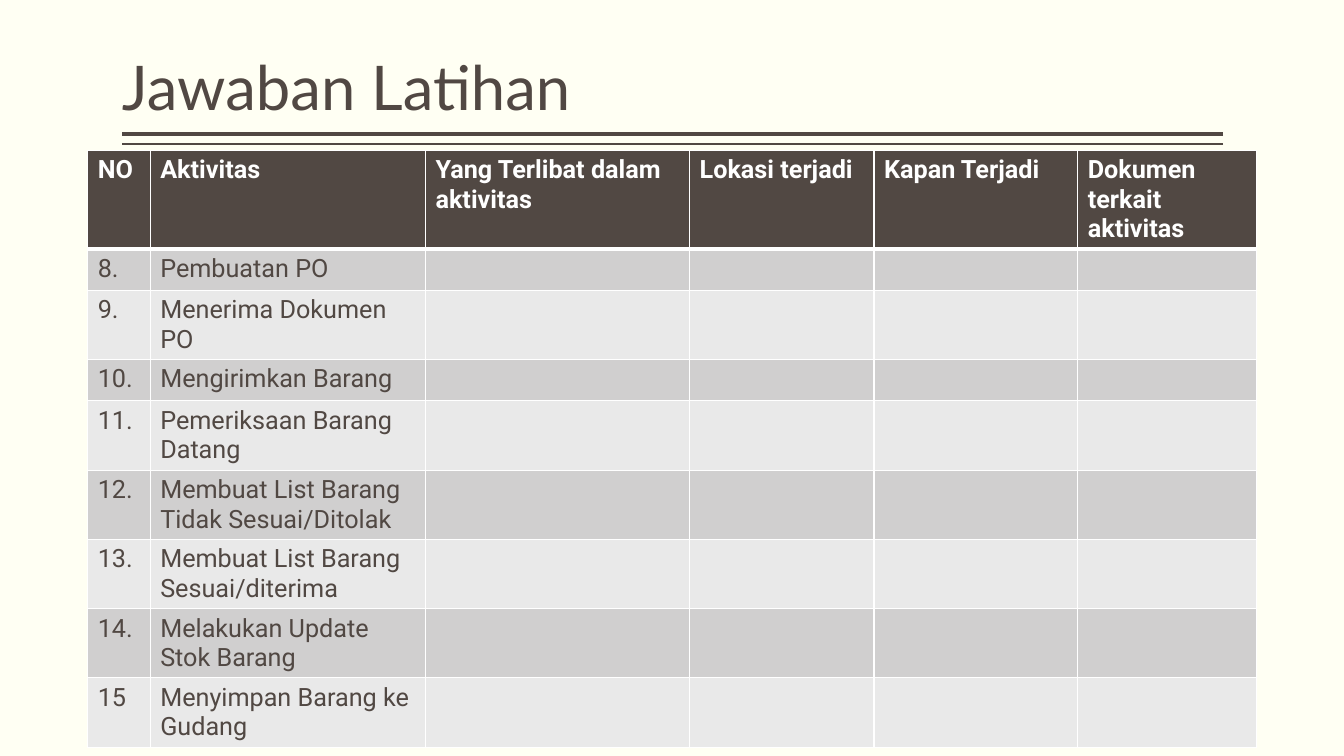
from lxml.etree import SubElement
from pptx import Presentation
from pptx.dml.color import RGBColor
from pptx.enum.shapes import MSO_CONNECTOR
from pptx.enum.text import MSO_ANCHOR, MSO_AUTO_SIZE, PP_ALIGN
from pptx.oxml.ns import qn
from pptx.util import Inches, Pt

# Content
TITLE = "Jawaban Latihan"
HEADERS = ["NO", "Aktivitas", "Yang Terlibat dalam aktivitas",
           "Lokasi terjadi", "Kapan Terjadi", "Dokumen terkait aktivitas"]
ACTIVITIES = [
    ("8.", "Pembuatan PO"),
    ("9.", "Menerima Dokumen PO"),
    ("10.", "Mengirimkan Barang"),
    ("11.", "Pemeriksaan Barang Datang"),
    ("12.", "Membuat List Barang Tidak Sesuai/Ditolak"),
    ("13.", "Membuat List Barang\vSesuai/diterima"),
    ("14.", "Melakukan Update\vStok Barang"),
    ("15", "Menyimpan Barang ke\vGudang"),
]

# Layout and colours
COL_WIDTHS = [0.62, 2.73, 2.62, 1.83, 2.02, 1.77]
ROW_HEIGHT = 0.41
TABLE_LEFT, TABLE_TOP = 0.87, 1.49
LEFT, WIDTH = 1.21, 10.92
RULES = [(1.33, 3), (1.43, 1)]  # height on slide, line weight
BROWN, WHITE, CREAM = "514843", "FFFFFF", "FFFFF3"
BANDS = ["D0CFCF", "E9E9E9"]


def rgb(value):
    return RGBColor.from_string(value)


def style(p, font, size, color, bold=False):
    for r in p.runs:
        r.font.name, r.font.size, r.font.bold = font, Pt(size), bold
        r.font.color.rgb = rgb(color)


def set_borders(cell, bottom):
    """Draw white borders; they must precede the fill in the cell."""
    tc_pr = cell._tc.get_or_add_tcPr()
    for side, weight in (("L", 1), ("R", 1), ("T", 1), ("B", bottom)):
        ln = SubElement(tc_pr, qn(f"a:ln{side}"), w=str(Pt(weight)))
        fill = SubElement(ln, qn("a:solidFill"))
        SubElement(fill, qn("a:srgbClr"), val=WHITE)


prs = Presentation()
prs.slide_width, prs.slide_height = Inches(13.33), Inches(7.5)
s = prs.slides.add_slide(prs.slide_layouts[5])
s.background.fill.solid()
s.background.fill.fore_color.rgb = rgb(CREAM)

# Title
title = s.shapes.title
title.left, title.top = Inches(LEFT), Inches(0.08)
title.width, title.height = Inches(WIDTH), Inches(1.2)
tf = title.text_frame
tf.text = TITLE
tf.auto_size = MSO_AUTO_SIZE.NONE
tf.word_wrap = True
tf.vertical_anchor = MSO_ANCHOR.BOTTOM
tf.margin_left = tf.margin_right = 0
p = tf.paragraphs[0]
p.alignment, p.line_spacing = PP_ALIGN.LEFT, 0.9
style(p, "Lato", 44, BROWN)

# Double rule under the title
for y, weight in RULES:
    rule = s.shapes.add_connector(MSO_CONNECTOR.STRAIGHT, Inches(LEFT + WIDTH),
                                  Inches(y), Inches(LEFT), Inches(y))
    rule.line.color.rgb = rgb(BROWN)
    rule.line.width = Pt(weight)
    SubElement(rule._element.spPr, qn("a:effectLst"))

# Activity table
rows = [HEADERS] + [[*row] + [""] * (len(HEADERS) - len(row)) for row in ACTIVITIES]
table = s.shapes.add_table(
    len(rows), len(HEADERS), Inches(TABLE_LEFT), Inches(TABLE_TOP),
    Inches(sum(COL_WIDTHS)), Inches(ROW_HEIGHT * len(rows))).table
for column, width in zip(table.columns, COL_WIDTHS):
    column.width = Inches(width)

for i, row in enumerate(rows):
    table.rows[i].height = Inches(ROW_HEIGHT)
    header = i == 0
    for j, text in enumerate(row):
        cell = table.cell(i, j)
        set_borders(cell, 3 if header else 1)
        cell.fill.solid()
        cell.fill.fore_color.rgb = rgb(BROWN if header else BANDS[(i - 1) % 2])
        cell.text_frame.text = text
        if "\v" in text:
            cell.vertical_anchor = MSO_ANCHOR.MIDDLE
        style(cell.text_frame.paragraphs[0], "Roboto", 18,
              WHITE if header else BROWN, header)

prs.save("out.pptx")
